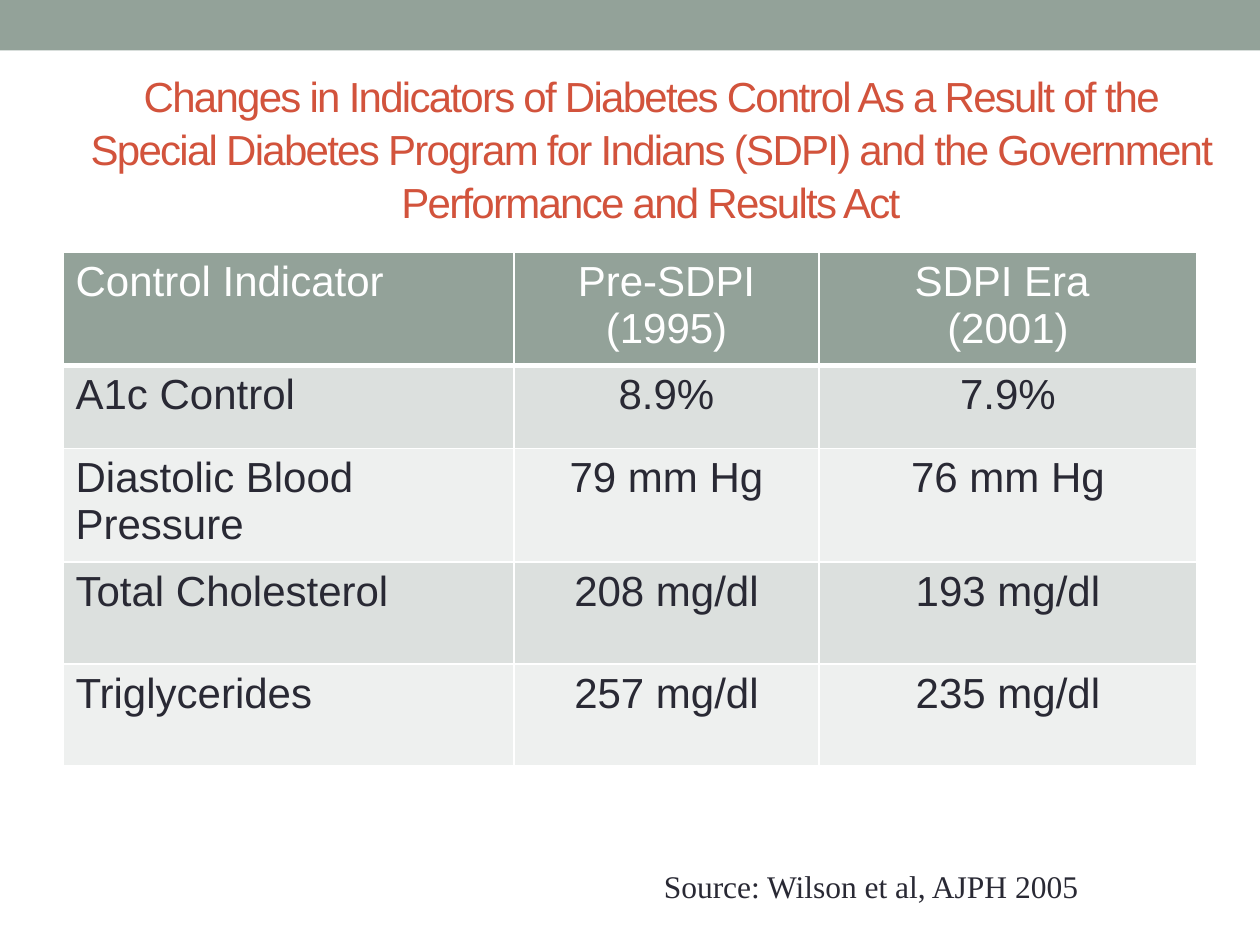
from lxml.etree import SubElement
from pptx import Presentation
from pptx.dml.color import RGBColor
from pptx.enum.shapes import MSO_SHAPE
from pptx.enum.text import MSO_ANCHOR, MSO_AUTO_SIZE, PP_ALIGN
from pptx.oxml.ns import qn
from pptx.util import Inches, Pt

SAGE = RGBColor(0x93, 0xA2, 0x99)
RUST = RGBColor(0xD2, 0x53, 0x3C)
INK = RGBColor(0x29, 0x29, 0x34)
WHITE = RGBColor(0xFF, 0xFF, 0xFF)
BANDS = RGBColor(0xEE, 0xF0, 0xEF), RGBColor(0xDC, 0xE0, 0xDE)

WIDTH, HEIGHT = 10, 7.5
COLUMN_WIDTHS = 3.58, 2.42, 3
ROW_HEIGHTS = 0.9, 0.66, 0.9, 0.81, 0.81
INDICATORS = (
    ("Control Indicator", "Pre-SDPI (1995)", "SDPI Era \n(2001)"),
    ("A1c Control", "8.9%", "7.9%"),
    ("Diastolic Blood Pressure", "79 mm Hg", "76 mm Hg"),
    ("Total Cholesterol", "208 mg/dl", "193 mg/dl"),
    ("Triglycerides", "257 mg/dl", "235 mg/dl"),
)


class SlideBuilder:
    """Holds the style and the current slide; boxes are in inches of the slide."""

    def __init__(self, deck):
        self.font, self.size = "Arial", 24
        self.page = deck.slides.add_slide(deck.slide_layouts[5])

    def set_text(self, frame, text, color, align=PP_ALIGN.LEFT, font=None, size=None):
        frame.text = text
        for para in frame.paragraphs:
            para.alignment = align
            for span in para.runs:
                span.font.name = font or self.font
                span.font.size = Pt(size or self.size)
                span.font.bold = False
                span.font.color.rgb = color

    def band(self, *box):
        bar = self.page.shapes.add_shape(MSO_SHAPE.RECTANGLE, *map(Inches, box))
        bar.shadow.inherit = False
        bar.fill.solid()
        bar.fill.fore_color.rgb = SAGE
        bar.line.fill.background()

    def title(self, text, *box):
        title = self.page.shapes.title
        title.left, title.top, title.width, title.height = map(Inches, box)
        frame = title.text_frame
        frame.auto_size = MSO_AUTO_SIZE.NONE
        frame.vertical_anchor = MSO_ANCHOR.MIDDLE
        self.set_text(frame, text, RUST, PP_ALIGN.CENTER)
        para = frame.paragraphs[0]
        para.line_spacing = 1.05
        para.runs[0]._r.get_or_add_rPr().set("spc", "-100")

    def border(self, cell, bottom):
        properties = cell._tc.get_or_add_tcPr()
        for side, points in (("L", 1), ("R", 1), ("T", 1), ("B", bottom)):
            line = SubElement(properties, qn(f"a:ln{side}"), w=str(Pt(points)))
            SubElement(SubElement(line, qn("a:solidFill")), qn("a:srgbClr"), val=str(WHITE))

    def table(self, rows, left, top):
        box = map(Inches, (left, top, sum(COLUMN_WIDTHS), sum(ROW_HEIGHTS)))
        table = self.page.shapes.add_table(len(rows), len(rows[0]), *box).table
        for column, width in zip(table.columns, COLUMN_WIDTHS):
            column.width = Inches(width)
        for index, (row, height, texts) in enumerate(zip(table.rows, ROW_HEIGHTS, rows)):
            row.height = Inches(height)
            header = index == 0
            for position, (cell, text) in enumerate(zip(row.cells, texts)):
                self.border(cell, 3 if header else 1)
                cell.fill.solid()
                cell.fill.fore_color.rgb = SAGE if header else BANDS[index % 2]
                align = PP_ALIGN.CENTER if position else PP_ALIGN.LEFT
                self.set_text(cell.text_frame, text, WHITE if header else INK, align)

    def source(self, text, *box):
        frame = self.page.shapes.add_textbox(*map(Inches, box)).text_frame
        frame.word_wrap = False
        frame.auto_size = MSO_AUTO_SIZE.SHAPE_TO_FIT_TEXT
        self.set_text(frame, text, INK, font="Times New Roman", size=18)


def main():
    deck = Presentation()
    deck.slide_width, deck.slide_height = Inches(WIDTH), Inches(HEIGHT)
    builder = SlideBuilder(deck)
    builder.band(0, 0, WIDTH, 0.4)
    builder.title(
        "Changes in Indicators of Diabetes Control As a Result of the Special Diabetes "
        "Program for Indians (SDPI) and the Government Performance and Results Act",
        0.58, 0.42, 9.17, 1.5,
    )
    builder.table(INDICATORS, 0.5, 2)
    builder.source("Source: Wilson et al, AJPH 2005", 5.17, 6.83, 3.53, 0.4)
    deck.save("out.pptx")


if __name__ == "__main__":
    main()
